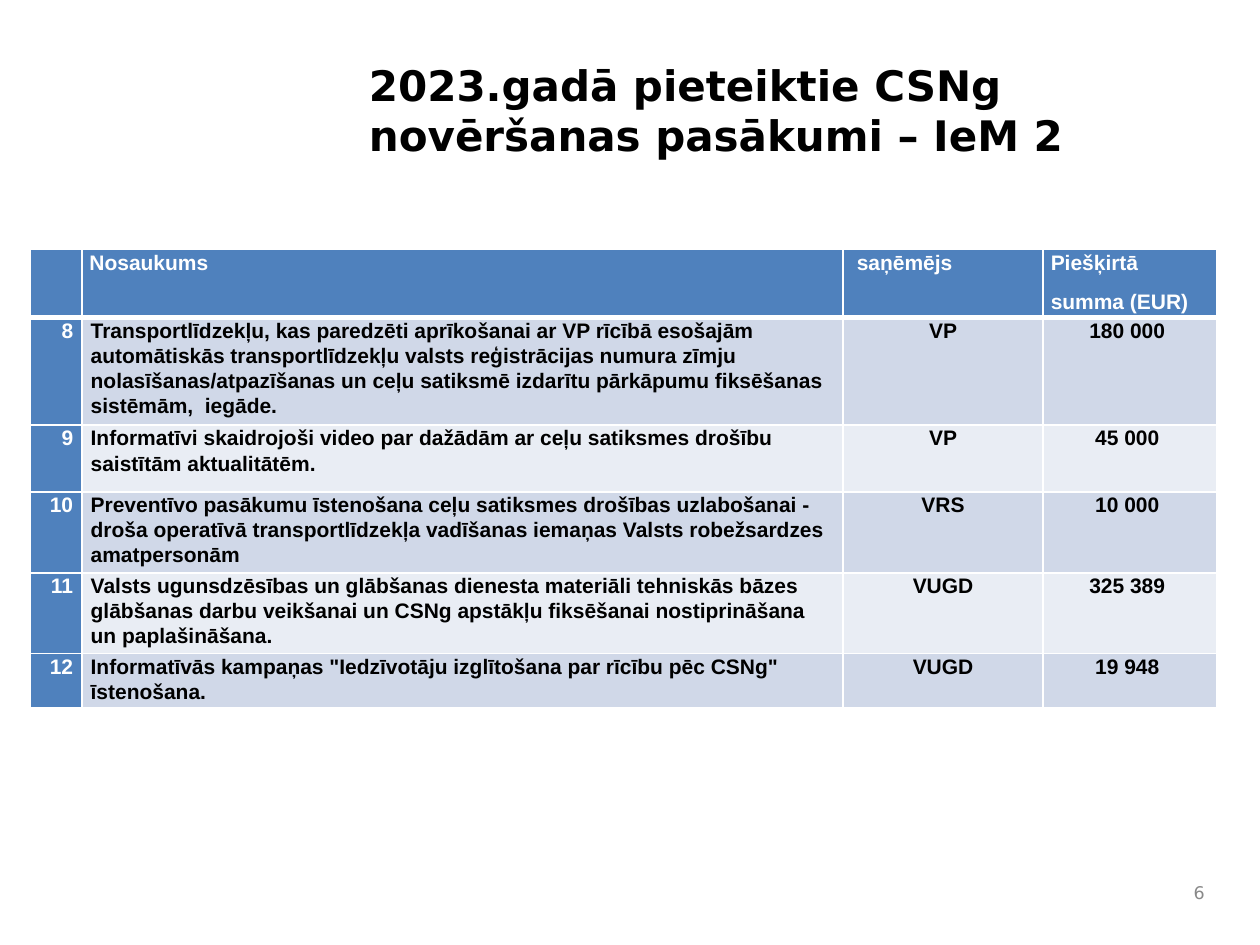
from lxml.etree import SubElement
from pptx import Presentation
from pptx.dml.color import RGBColor
from pptx.enum.text import MSO_ANCHOR, PP_ALIGN
from pptx.oxml.ns import qn
from pptx.util import Inches, Pt


def paint(hex_code):
    return RGBColor.from_string(hex_code)


def add_label(slide, area, words, size, color, bold, align, anchor):
    box = slide.shapes.add_textbox(*[Inches(length) for length in area])
    frame = box.text_frame
    frame.word_wrap = True
    frame.vertical_anchor = anchor
    para = frame.paragraphs[0]
    para.text = words
    para.alignment = align
    para.space_after = Pt(6)
    para.font.name = "DejaVu Sans"
    para.font.size = Pt(size)
    para.font.bold = bold
    para.font.color.rgb = paint(color)


WIDTH, HEIGHT = 10, 7.5
deck = Presentation()
deck.slide_width, deck.slide_height = Inches(WIDTH), Inches(HEIGHT)
page = deck.slides.add_slide(deck.slide_layouts[6])

add_label(page, (WIDTH * 0.283, HEIGHT * 0.056, WIDTH * 0.667, HEIGHT * 0.15),
          "2023.gadā pieteiktie CSNg novēršanas pasākumi – IeM 2",
          24, "000000", True, PP_ALIGN.LEFT, MSO_ANCHOR.TOP)
add_label(page, (WIDTH * 0.933, HEIGHT * 0.923, WIDTH * 0.033, HEIGHT * 0.044),
          "6", 10, "898989", False, PP_ALIGN.RIGHT, MSO_ANCHOR.MIDDLE)

measures = [
    ("", "Nosaukums", "saņēmējs", "Piešķirtā\nsumma (EUR)"),
    ("8", "Transportlīdzekļu, kas paredzēti aprīkošanai ar VP rīcībā esošajām "
     "automātiskās transportlīdzekļu valsts reģistrācijas numura zīmju "
     "nolasīšanas/atpazīšanas un ceļu satiksmē izdarītu pārkāpumu fiksēšanas "
     "sistēmām,  iegāde.", "VP", "180 000 "),
    ("9", "Informatīvi skaidrojoši video par dažādām ar ceļu satiksmes drošību "
     "saistītām aktualitātēm.", "VP", "45 000 "),
    ("10", "Preventīvo pasākumu īstenošana ceļu satiksmes drošības uzlabošanai - "
     "droša operatīvā transportlīdzekļa vadīšanas iemaņas Valsts robežsardzes "
     "amatpersonām", "VRS", "10 000 "),
    ("11", "Valsts ugunsdzēsības un glābšanas dienesta materiāli tehniskās bāzes "
     "glābšanas darbu veikšanai un CSNg apstākļu fiksēšanai nostiprināšana "
     "un paplašināšana.", "VUGD", "325 389 "),
    ("12", 'Informatīvās kampaņas "Iedzīvotāju izglītošana par rīcību pēc CSNg" '
     "īstenošana.", "VUGD", "19 948 "),
]
column_widths = [0.41, 6.04, 1.59, 1.38]
row_heights = [0.53, 0.8, 0.53, 0.6, 0.6, 0.4]
column_aligns = [PP_ALIGN.RIGHT, PP_ALIGN.LEFT, PP_ALIGN.CENTER, PP_ALIGN.CENTER]
band_fills = ["E9EDF4", "D0D8E8"]

table = page.shapes.add_table(
    len(row_heights), len(column_widths), Inches(WIDTH * 0.024), Inches(HEIGHT * 0.264),
    Inches(sum(column_widths)), Inches(sum(row_heights))).table
for column, width in zip(table.columns, column_widths):
    column.width = Inches(width)
for row, height in zip(table.rows, row_heights):
    row.height = Inches(height)

for row_index, measure in enumerate(measures):
    for column_index, words in enumerate(measure):
        cell = table.cell(row_index, column_index)
        is_header = row_index == 0
        is_accent = is_header or column_index == 0
        properties = cell._tc.get_or_add_tcPr()
        for side in ("L", "R", "T", "B"):
            thick = (row_index, side) in ((0, "B"), (1, "T"))
            border = SubElement(properties, qn(f"a:ln{side}"), w=str(Pt(3 if thick else 1)))
            SubElement(SubElement(border, qn("a:solidFill")), qn("a:srgbClr"), val="FFFFFF")
        cell.fill.solid()
        cell.fill.fore_color.rgb = paint("4F81BD" if is_accent else band_fills[row_index % 2])
        cell.margin_left = cell.margin_right = Inches(0.06 if is_header else 0.07)
        cell.margin_top = cell.margin_bottom = 0
        if is_header and column_index == 2:
            cell.margin_left = Inches(0.11)
        cell.text_frame.text = words
        for para in cell.text_frame.paragraphs:
            para.alignment = PP_ALIGN.JUSTIFY if is_header else column_aligns[column_index]
            para.line_spacing = 1.07
            para.space_after = Pt(8)
            para.font.name = "Arial"
            para.font.size = Pt(12)
            para.font.bold = True
            para.font.color.rgb = paint("FFFFFF" if is_accent else "000000")

deck.save("out.pptx")
